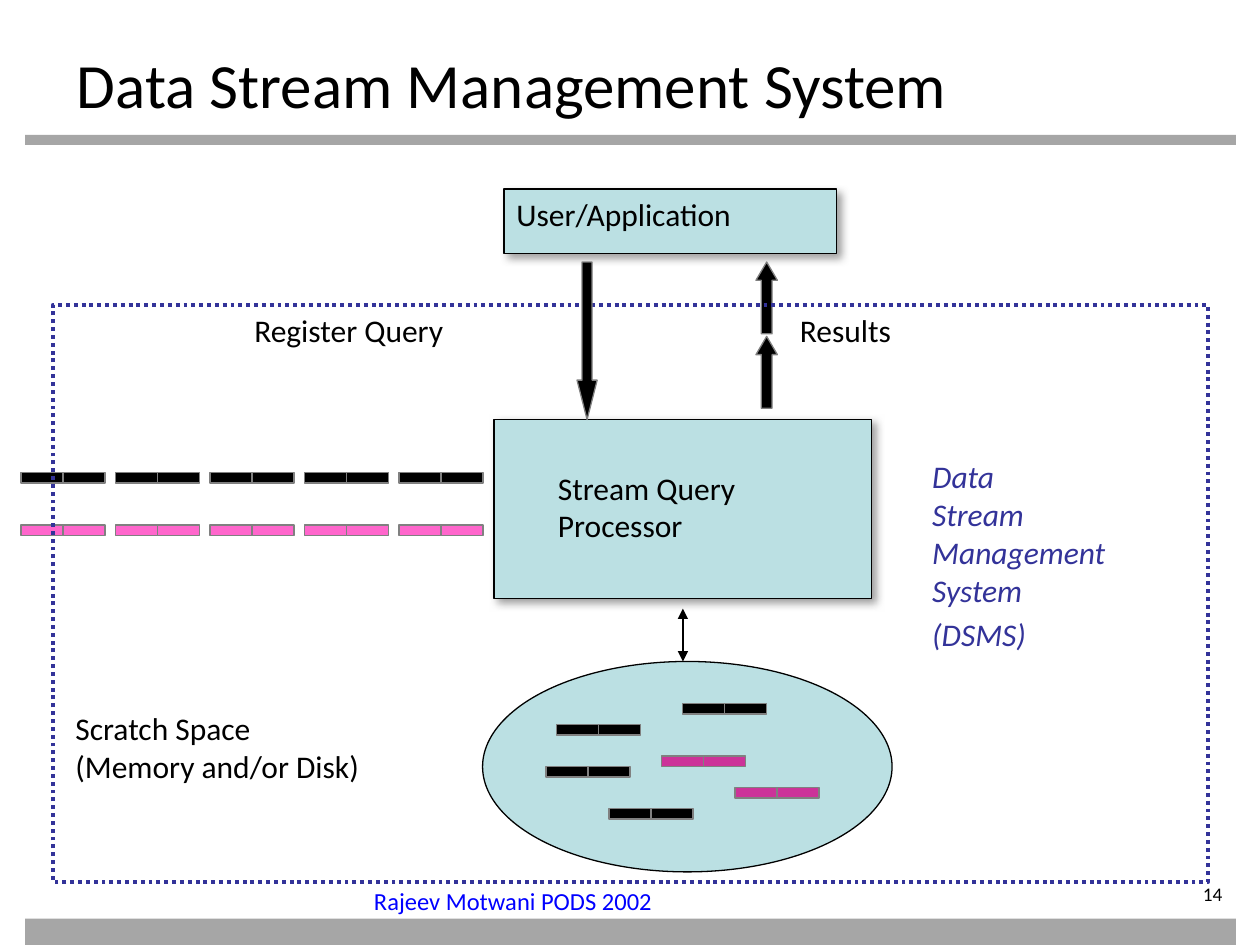
from lxml import etree
from pptx import Presentation
from pptx.dml.color import RGBColor
from pptx.enum.dml import MSO_LINE
from pptx.enum.shapes import MSO_CONNECTOR, MSO_SHAPE
from pptx.enum.text import MSO_ANCHOR, MSO_AUTO_SIZE, PP_ALIGN
from pptx.oxml.ns import qn
from pptx.util import Inches, Pt

RECT, OVAL = MSO_SHAPE.RECTANGLE, MSO_SHAPE.OVAL
UP, DOWN = MSO_SHAPE.UP_ARROW, MSO_SHAPE.DOWN_ARROW
LEFT, RIGHT = PP_ALIGN.LEFT, PP_ALIGN.RIGHT

FONT = "Calibri"
COLORS = {"black": "000000", "gray": "808080", "bar": "A6A6A6", "teal": "BBE0E3",
          "pink": "FF66CC", "magenta": "CC3399", "navy": "333399", "blue": "0000FF"}

# Content; places are in inches, packets in cells of a 1/12 inch grid
TITLE = "Data Stream Management System"
BARS = [(0.2, 1.07, 9.61, 0.08), (0.2, 7.29, 9.61, 0.21)]
BOXES = [(4, 1.5, 2.64, 0.51), (3.92, 3.33, 3, 1.42)]
STORE = (3.83, 5.25, 3.25, 1.67)
SYSTEM_BORDER = (0.42, 2.42, 9.17, 4.58)
ARROWS = [(UP, (6, 2.08, 0.17, 0.57), 0.852),
          (UP, (6, 2.67, 0.17, 0.57), 0.852),
          (DOWN, (4.58, 2.08, 0.16, 1.25), 1.957)]
LABELS = [  # place, lines, size, color, italic
    ((4, 1.5, 2.64, 0.51), ["User/Application"], 18, "black", False),
    ((1.92, 2.42, 2.53, 0.5), ["Register Query"], 18, "black", False),
    ((6.25, 2.42, 1.42, 0.5), ["Results"], 18, "black", False),
    ((4.33, 3.67, 2.28, 0.9), ["Stream Query", "Processor"], 18, "black", False),
    ((0.5, 5.58, 3.41, 0.9), ["Scratch Space", "(Memory and/or Disk)"], 18, "black", False),
    ((7.3, 3.58, 2.15, 2.18), ["Data", "Stream", "Management", "System", "(DSMS)"],
     18, "navy", True),
    ((2.87, 6.98, 3.54, 0.5), ["Rajeev Motwani PODS 2002"], 14, "blue", False),
]
PAGE_NUMBER = "14"
CELL = 1 / 12
PACKET_HALF = 4
STREAMS = [(45, "black"), (50, "pink")]
STREAM_START, STREAM_STEP, STREAM_LENGTH = 2, 9, 5
STORED_PACKETS = [(70, 75, "magenta"), (58, 77, "black"), (52, 73, "black"),
                  (63, 72, "magenta"), (53, 69, "black"), (65, 67, "black")]


def color(name):
    return RGBColor.from_string(COLORS[name])


def inches(place):
    return [Inches(value) for value in place]


def add_shape(parent, kind, place, fill=None, line=None, width=0.75):
    shape = parent.add_shape(kind, *inches(place))
    shape.shadow.inherit = False
    if fill:
        shape.fill.solid()
        shape.fill.fore_color.rgb = color(fill)
    else:
        shape.fill.background()
    if line:
        shape.line.color.rgb = color(line)
        shape.line.width = Pt(width)
    else:
        shape.line.fill.background()
    return shape


def add_shadow(shape):
    effects = shape._element.spPr.find(qn("a:effectLst"))
    shadow = etree.SubElement(effects, qn("a:outerShdw"), blurRad=str(Pt(5)),
                              dist=str(Pt(3)), dir="2700000", algn="tl", rotWithShape="0")
    tint = etree.SubElement(shadow, qn("a:srgbClr"), val=COLORS["gray"])
    etree.SubElement(tint, qn("a:alpha"), val="75000")


def write(frame, lines, size, ink, italic=False, align=LEFT):
    frame.word_wrap = True
    frame.auto_size = MSO_AUTO_SIZE.NONE
    frame.vertical_anchor = MSO_ANCHOR.TOP
    for index, line in enumerate(lines):
        para = frame.add_paragraph() if index else frame.paragraphs[0]
        para.alignment = align
        span = para.add_run()
        span.text = line
        span.font.name = FONT
        span.font.size = Pt(size)
        span.font.italic = italic
        span.font.color.rgb = color(ink)


def add_text(page, place, *text):
    box = page.shapes.add_textbox(*inches(place))
    write(box.text_frame, *text)
    return box


def add_packet(page, column, row, fill):
    group = page.shapes.add_group_shape()
    for half in range(2):
        place = ((column + half * PACKET_HALF) * CELL, row * CELL, PACKET_HALF * CELL, CELL)
        add_shape(group.shapes, RECT, place, fill, "gray")


def main():
    deck = Presentation()
    deck.slide_width, deck.slide_height = Inches(10), Inches(7.5)
    page = deck.slides.add_slide(deck.slide_layouts[5])

    # Title, bars and page number
    title = page.shapes.title
    title.left, title.top, title.width, title.height = inches((0.51, 0.28, 9, 0.55))
    title.text_frame.margin_top = Inches(0.08)
    write(title.text_frame, [TITLE], 36, "black")
    for place in BARS:
        add_shape(page.shapes, RECT, place, "bar")
    number = add_text(page, (8.7, 7, 1.1, 0.22), [PAGE_NUMBER], 11, "black", False, RIGHT)
    frame = number.text_frame
    frame.margin_left = frame.margin_top = frame.margin_bottom = 0

    # Application, processor and scratch store
    for place in BOXES:
        add_shadow(add_shape(page.shapes, RECT, place, "teal", "black"))
    add_shape(page.shapes, OVAL, STORE, "teal", "black")

    # Packets, streaming in and stored
    for row, fill in STREAMS:
        for index in range(STREAM_LENGTH):
            add_packet(page, STREAM_START + index * STREAM_STEP, row, fill)
    for packet in STORED_PACKETS:
        add_packet(page, *packet)

    # Arrows and the system border
    for kind, place, head in ARROWS[:2]:
        add_shape(page.shapes, kind, place, "black", "gray").adjustments[1] = head
    border = add_shape(page.shapes, RECT, SYSTEM_BORDER, None, "navy", 2.25)
    border.line.dash_style = MSO_LINE.ROUND_DOT
    for kind, place, head in ARROWS[2:]:
        add_shape(page.shapes, kind, place, "black", "gray").adjustments[1] = head
    link = page.shapes.add_connector(MSO_CONNECTOR.STRAIGHT, *inches((5.42, 5.25, 5.42, 4.83)))
    link.line.color.rgb = color("black")
    link.line.width = Pt(1.5)
    for end in ("a:headEnd", "a:tailEnd"):
        etree.SubElement(link.line._get_or_add_ln(), qn(end), type="triangle")
    etree.SubElement(link._element.spPr, qn("a:effectLst"))

    # Labels, with a gap before the abbreviation
    for label in LABELS:
        box = add_text(page, *label)
        for para in box.text_frame.paragraphs:
            if para.text == "System":
                para.space_after = Pt(3.6)

    deck.save("out.pptx")


if __name__ == "__main__":
    main()
